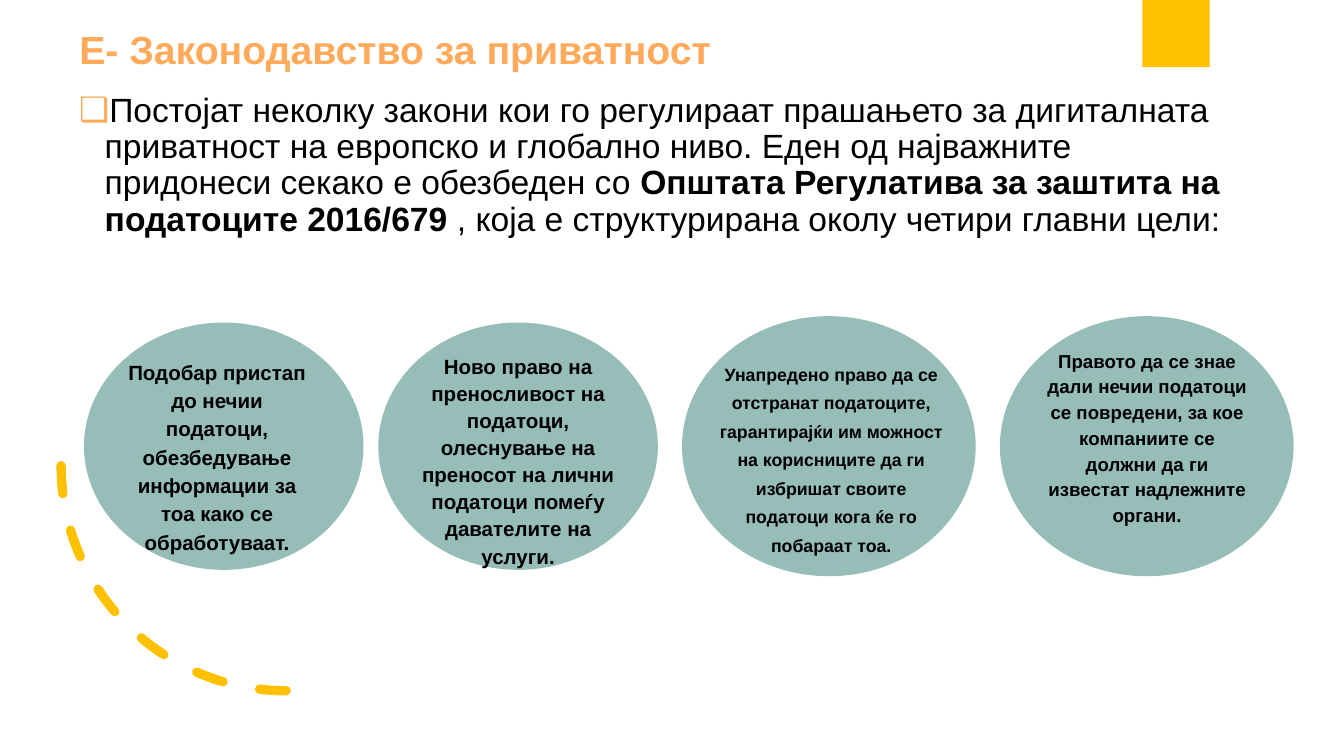
import math
from lxml import etree
from pptx import Presentation, util as u
from pptx.dml.color import RGBColor
from pptx.enum import dml, shapes, text
from pptx.oxml.ns import qn

# Content
HEX = {"gold": "FFC000", "peach": "FFAA5A", "sage": "96BDB8", "ink": "000000"}
TITLE = "Е- Законодавство за приватност"
INTRO = [
    ("Постојат неколку закони кои го регулираат прашањето за дигиталната приватност "
     "на европско и глобално ниво. Еден од најважните придонеси секако е обезбеден со ", False),
    ("Општата Регулатива за заштита на податоците 2016/679 ", True),
    (", која е структурирана околу четири главни цели:", False),
]
BIG, SMALL = (4.37, 3.87), (4.16, 3.68)
MID = 6.64  # shared centre line of the ovals
# oval left, oval size, text box, font size, line spacing, wording
GOALS = [
    (1.25, SMALL, (1.9, 5.3, 2.66, 2.93), 22, 1.15,
     "Подобар пристап до нечии податоци, обезбедување информации за тоа како се обработуваат."),
    (5.63, SMALL, (6.13, 5.23, 3.16, 3.22), 22, 1.1,
     "Ново право на преносливост на податоци, олеснување на преносот на лични податоци "
     "помеѓу давателите на услуги."),
    (10.15, BIG, (10.65, 5.3, 3.44, 3), 19, 1.34,
     "Унапредено право да се отстранат податоците, гарантирајќи им можност на корисниците "
     "да ги избришат своите податоци кога ќе го побараат тоа."),
    (14.88, BIG, (15.55, 5.15, 3.04, 2.71), 20, 1.15,
     "Правото да се знае дали нечии податоци се повредени, за кое компаниите се должни "
     "да ги известат надлежните органи."),
]

deck = Presentation()
deck.slide_width, deck.slide_height = u.Inches(20), u.Inches(11.25)
slide = deck.slides.add_slide(deck.slide_layouts[5])
parts = slide.shapes


def inch(*nums):
    return [u.Inches(n) for n in nums]


def tint(shape, name):
    shape.shadow.inherit = False
    shape.fill.solid()
    shape.fill.fore_color.rgb = RGBColor.from_string(HEX[name])
    shape.line.fill.background()


def frame(shape, pad=(0, 0)):
    box = shape.text_frame
    fmt = {"margin_left": pad[0], "margin_right": pad[0], "margin_top": pad[1],
           "margin_bottom": pad[1]}
    for key, val in fmt.items():
        setattr(box, key, u.Inches(val))
    box.word_wrap, box.auto_size = True, text.MSO_AUTO_SIZE.NONE
    box.vertical_anchor = text.MSO_ANCHOR.TOP
    return box.paragraphs[0]


def write(para, runs, size, name, **fmt):
    for key, val in fmt.items():
        setattr(para, key, val)
    for words, bold in runs:
        run = para.add_run()
        run.text = words
        for key, val in {"name": "Arial", "size": u.Pt(size), "bold": bold}.items():
            setattr(run.font, key, val)
        run.font.color.rgb = RGBColor.from_string(HEX[name])


# Half disc at the top edge
cx, cy, rad = 17.68, -0.17, 0.95
edge = math.asin(-cy / rad)
turns = [edge + (math.pi - 2 * edge) * i / 60 for i in range(61)]
dots = [(cx + rad * math.cos(t), max(0, cy + rad * math.sin(t))) for t in turns]
pen = parts.build_freeform(*dots[0], scale=u.Inches(1))
pen.add_line_segments(dots[1:], close=True)
tint(pen.convert_to_shape(), "gold")

# Dashed arc
arc = parts.add_shape(shapes.MSO_SHAPE.ARC, *inch(0.91, 3.58, 6.7, 6.7))
arc.shadow.inherit = False
arc.rotation = 270
arc.element.spPr.find(qn("a:xfrm")).set("flipH", "1")
arc.fill.background()
arc.line.color.rgb = RGBColor.from_string(HEX["gold"])
arc.line.width, arc.line.dash_style = u.Pt(10), dml.MSO_LINE.DASH
arc.element.spPr.find(qn("a:ln")).set("cap", "rnd")

# Title
head = parts.title
head.left, head.top, head.width, head.height = inch(1.08, 0.4, 17.25, 0.9)
write(frame(head, (0.1, 0.05)), [(TITLE, True)], 42, "peach",
      alignment=text.PP_ALIGN.LEFT, line_spacing=0.9)

# Bulleted introduction
para = frame(parts.add_textbox(*inch(1.08, 1.34, 17.25, 2.96)), (0.1, 0.05))
write(para, INTRO, 36, "ink", line_spacing=0.9)
props = para._p.get_or_add_pPr()
props.set("marL", str(u.Inches(0.38)))
props.set("indent", str(-u.Inches(0.38)))
color = etree.SubElement(props, qn("a:buClr"))
etree.SubElement(color, qn("a:srgbClr"), val=HEX["peach"])
etree.SubElement(props, qn("a:buFont"), typeface="Arial")
etree.SubElement(props, qn("a:buChar"), char="❑")

# Four goals
for left, (wide, high), place, size, gap, words in GOALS:
    oval = parts.add_shape(shapes.MSO_SHAPE.OVAL, *inch(left, MID - high / 2, wide, high))
    tint(oval, "sage")
    write(frame(parts.add_textbox(*inch(*place))), [(words, True)], size, "ink",
          alignment=text.PP_ALIGN.CENTER, line_spacing=gap)

deck.save("out.pptx")
